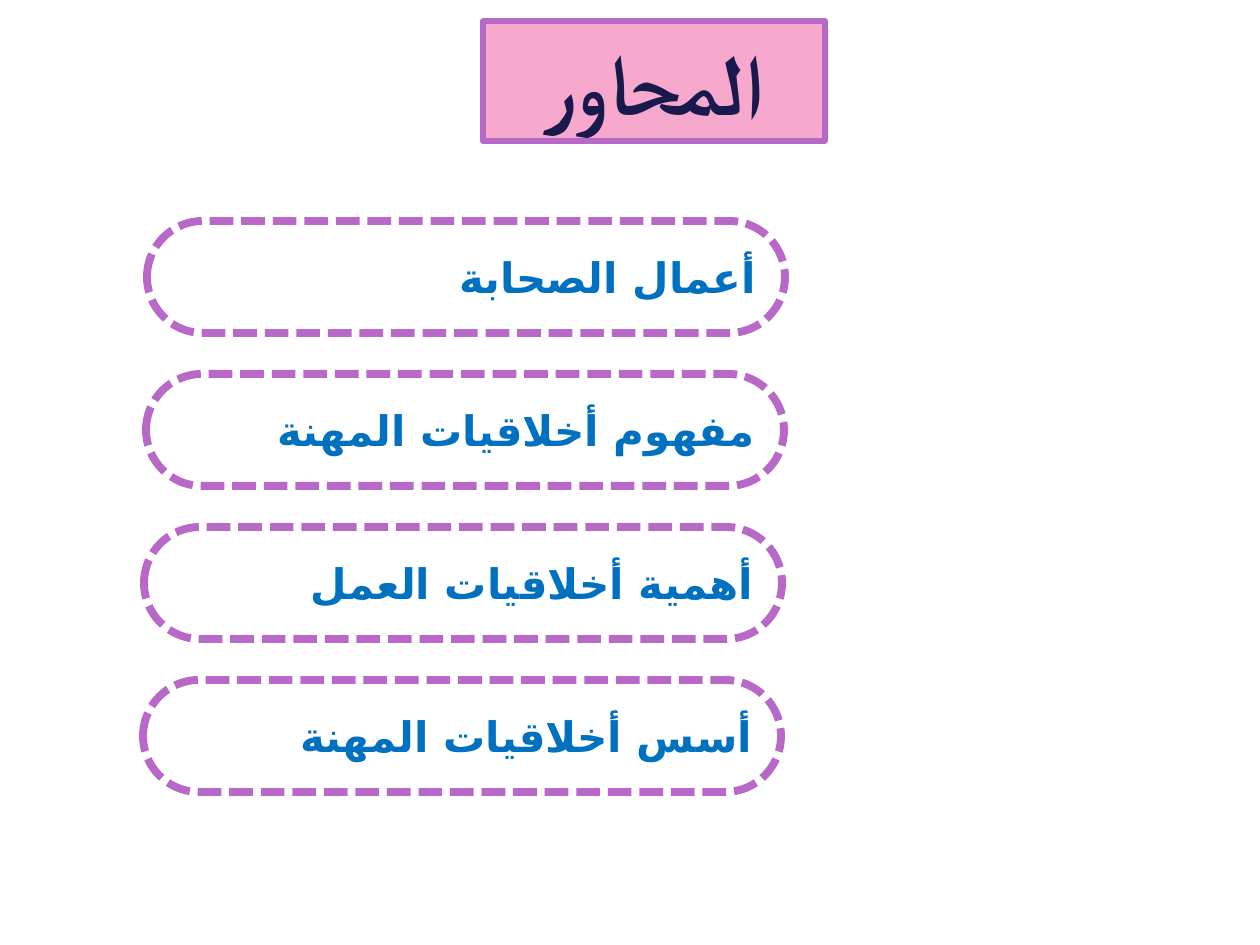
from dataclasses import dataclass

from lxml import etree
from pptx import Presentation
from pptx.dml.color import RGBColor
from pptx.enum.dml import MSO_LINE
from pptx.enum.shapes import MSO_SHAPE
from pptx.enum.text import MSO_ANCHOR, PP_ALIGN
from pptx.oxml.ns import qn
from pptx.util import Pt

RECT, ROUND_RECT = MSO_SHAPE.RECTANGLE, MSO_SHAPE.ROUNDED_RECTANGLE
DASH = MSO_LINE.SQUARE_DOT  # stored as sysDash or sysDot by name below
DASH = MSO_LINE.DASH if DASH is None else DASH
CENTER, RIGHT = PP_ALIGN.CENTER, PP_ALIGN.RIGHT
MIDDLE = MSO_ANCHOR.MIDDLE
PX_PER_INCH = 126


@dataclass(frozen=True)
class Theme:
    paper: str = "FFFFFF"
    border: str = "B869C8"
    title_fill: str = "F6A8CD"
    title_ink: str = "19194D"
    topic_ink: str = "0070C0"
    title_font: str = "Arial"
    topic_font: str = "DejaVu Sans"
    title_size: int = 49
    topic_size: int = 24
    title_line: float = 3
    topic_line: float = 4.5


THEME = Theme()
TOPICS = [
    "أعمال الصحابة",
    "مفهوم أخلاقيات المهنة",
    "أهمية أخلاقيات العمل",
    "أسس أخلاقيات المهنة",
]


def px(n):
    return round(n * 914400 / PX_PER_INCH)


def add_box(slide, kind, box, fill, line_width):
    sp = slide.shapes.add_shape(kind, *map(px, box))
    sp.shadow.inherit = False
    sp.fill.solid()
    sp.fill.fore_color.rgb = RGBColor.from_string(fill)
    sp.line.color.rgb = RGBColor.from_string(THEME.border)
    sp.line.width = Pt(line_width)
    return sp


def add_text(sp, text, font, size, color, align, wrap):
    tf = sp.text_frame
    tf.word_wrap = wrap
    tf.vertical_anchor = MIDDLE
    p = tf.paragraphs[0]
    p.alignment = align
    r = p.add_run()
    r.text = text
    r.font.name = font
    r.font.size = Pt(size)
    r.font.bold = True
    r.font.color.rgb = RGBColor.from_string(color)
    # Arabic letters take the complex-script font
    etree.SubElement(r.font._element, qn("a:cs"), typeface=font)
    return p


def add_title(slide, box, text):
    sp = add_box(slide, RECT, box, THEME.title_fill, THEME.title_line)
    add_text(sp, text, THEME.title_font, THEME.title_size,
             THEME.title_ink, CENTER, True)


def add_topic(slide, box, text):
    sp = add_box(slide, ROUND_RECT, box, THEME.paper, THEME.topic_line)
    sp.adjustments[0] = 0.5
    sp.line.dash_style = DASH
    sp.line._ln.find(qn("a:prstDash")).set("val", "sysDash")
    p = add_text(sp, text, THEME.topic_font, THEME.topic_size,
                 THEME.topic_ink, RIGHT, False)
    p._p.get_or_add_pPr().set("rtl", "1")


def add_topic_list(slide, box, topics):
    left, top, width, height = box
    pitch = 153
    for i, topic in enumerate(topics):
        # Each row shifts slightly to the left
        shift = i * 3 // 2
        add_topic(slide, (left - shift, top + i * pitch, width, height), topic)


def main():
    prs = Presentation()
    prs.slide_width, prs.slide_height = px(1260), px(945)
    slide = prs.slides.add_slide(prs.slide_layouts[6])
    add_topic_list(slide, (147, 221, 638, 112), TOPICS)
    add_title(slide, (483, 21, 342, 120), "المحاور")
    prs.save("out.pptx")


if __name__ == "__main__":
    main()
